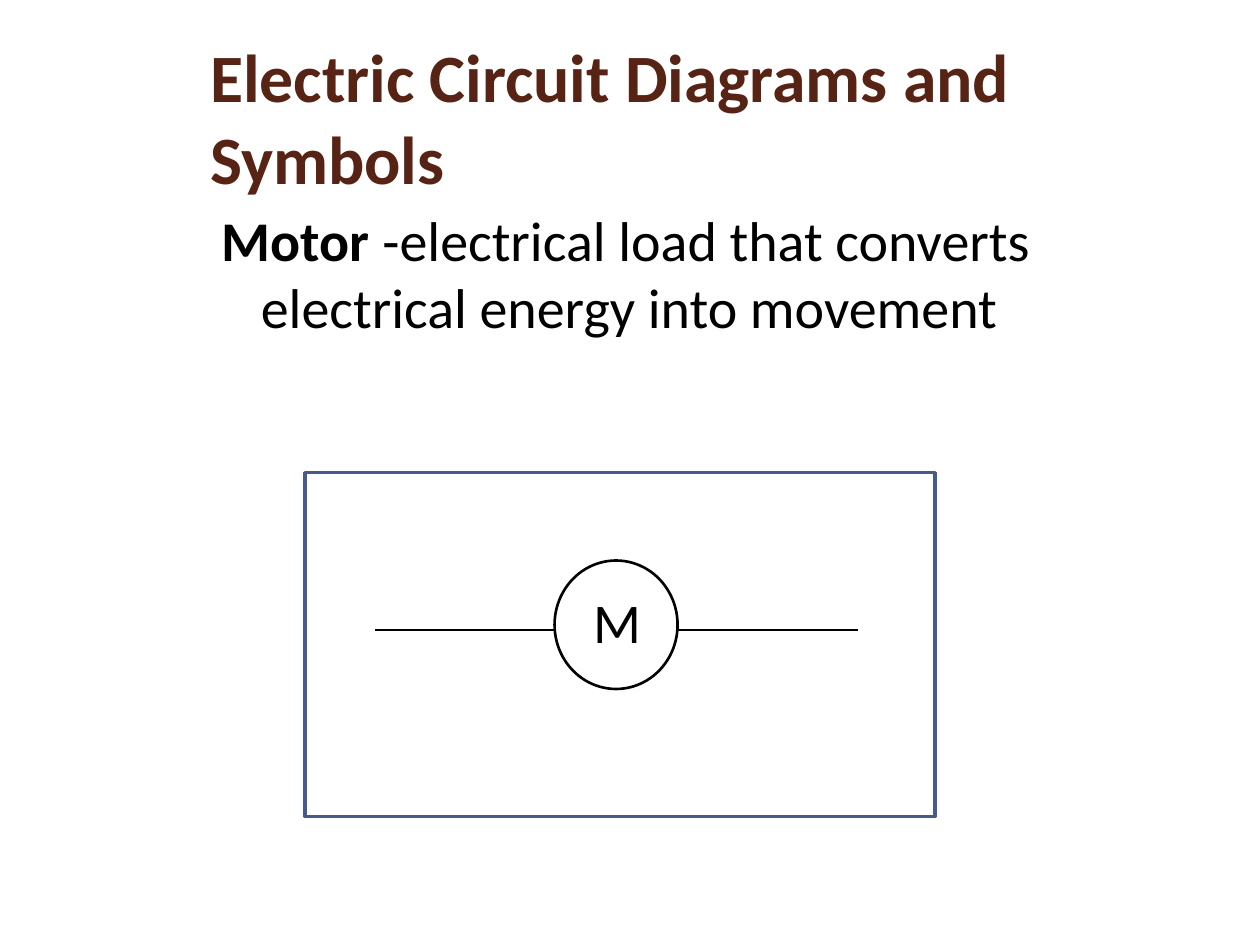
"""Build a slide that introduces the circuit symbol of a motor."""
from dataclasses import dataclass

from lxml.etree import SubElement
from pptx import Presentation
from pptx.dml.color import RGBColor
from pptx.enum.shapes import MSO_CONNECTOR, MSO_SHAPE
from pptx.enum.text import MSO_ANCHOR
from pptx.oxml.ns import qn
from pptx.slide import Slide
from pptx.util import Cm, Pt

FONT = "Calibri"
BLACK = "000000"
WHITE = "FFFFFF"
BROWN = "572314"
BLUE = "475A8D"


@dataclass(frozen=True)
class Box:
    left: float
    top: float
    width: float
    height: float

    def lengths(self) -> tuple[Cm, Cm, Cm, Cm]:
        return Cm(self.left), Cm(self.top), Cm(self.width), Cm(self.height)


@dataclass(frozen=True)
class Run:
    text: str
    size: float = 32
    color: str = BLACK
    bold: bool = False


@dataclass(frozen=True)
class Passage:
    box: Box
    runs: tuple[Run, ...]
    anchor: MSO_ANCHOR = MSO_ANCHOR.TOP
    space_before: float = 0
    margin: float = 0
    indent: float = 0


@dataclass(frozen=True)
class Outline:
    preset: MSO_SHAPE
    box: Box
    color: str
    weight: float


@dataclass(frozen=True)
class Wire:
    start: float
    end: float
    height: float


def rgb(color: str) -> RGBColor:
    return RGBColor.from_string(color)


def add_passage(slide: Slide, passage: Passage) -> None:
    frame = slide.shapes.add_textbox(*passage.box.lengths()).text_frame
    frame.word_wrap = True
    frame.vertical_anchor = passage.anchor
    paragraph = frame.paragraphs[0]
    paragraph.space_before = Pt(passage.space_before)
    properties = paragraph._p.get_or_add_pPr()
    properties.set("marL", str(Cm(passage.margin)))
    properties.set("indent", str(Cm(passage.indent)))
    for part in passage.runs:
        run = paragraph.add_run()
        run.text = part.text
        run.font.name = FONT
        run.font.size = Pt(part.size)
        run.font.bold = part.bold
        run.font.color.rgb = rgb(part.color)


def add_outline(slide: Slide, outline: Outline) -> None:
    shape = slide.shapes.add_shape(outline.preset, *outline.box.lengths())
    shape.shadow.inherit = False
    shape.fill.solid()
    shape.fill.fore_color.rgb = rgb(WHITE)
    shape.line.color.rgb = rgb(outline.color)
    shape.line.width = Pt(outline.weight)


def add_wire(slide: Slide, wire: Wire) -> None:
    connector = slide.shapes.add_connector(
        MSO_CONNECTOR.STRAIGHT,
        Cm(wire.start), Cm(wire.height), Cm(wire.end), Cm(wire.height),
    )
    connector.line.color.rgb = rgb(BLACK)
    connector.line.width = Pt(1.5)
    SubElement(connector._element.spPr, qn("a:effectLst"))


def main() -> None:
    presentation = Presentation()
    presentation.slide_width = Cm(25.4)
    presentation.slide_height = Cm(19.05)
    slide = presentation.slides.add_slide(presentation.slide_layouts[6])

    heading = Passage(
        Box(3.99, 0.76, 20.83, 3.18),
        (Run("Electric Circuit Diagrams and Symbols", 38.7, BROWN, True),),
        anchor=MSO_ANCHOR.MIDDLE,
    )
    definition = Passage(
        Box(3.99, 4.01, 20.83, 13.34),
        (
            Run("Motor ", bold=True),
            Run("-electrical load that converts electrical energy into movement"),
        ),
        space_before=6, margin=1.02, indent=-0.79,
    )
    motor = Box(11.18, 11.3, 2.48, 2.59)
    motor_right = motor.left + motor.width
    wire_length = 3.63
    wire_height = 12.7
    frame = Outline(MSO_SHAPE.RECTANGLE, Box(6.15, 9.53, 12.7, 6.93), BLUE, 2)
    circle = Outline(MSO_SHAPE.OVAL, motor, BLACK, 1.5)
    motor_letter = Passage(Box(11.71, 11.71, 1.57, 1.63), (Run("M"),))

    for passage in (heading, definition):
        add_passage(slide, passage)
    for outline in (frame, circle):
        add_outline(slide, outline)
    for wire in (
        Wire(motor.left - wire_length, motor.left, wire_height),
        Wire(motor_right, motor_right + wire_length, wire_height),
    ):
        add_wire(slide, wire)
    add_passage(slide, motor_letter)

    presentation.save("out.pptx")


if __name__ == "__main__":
    main()
